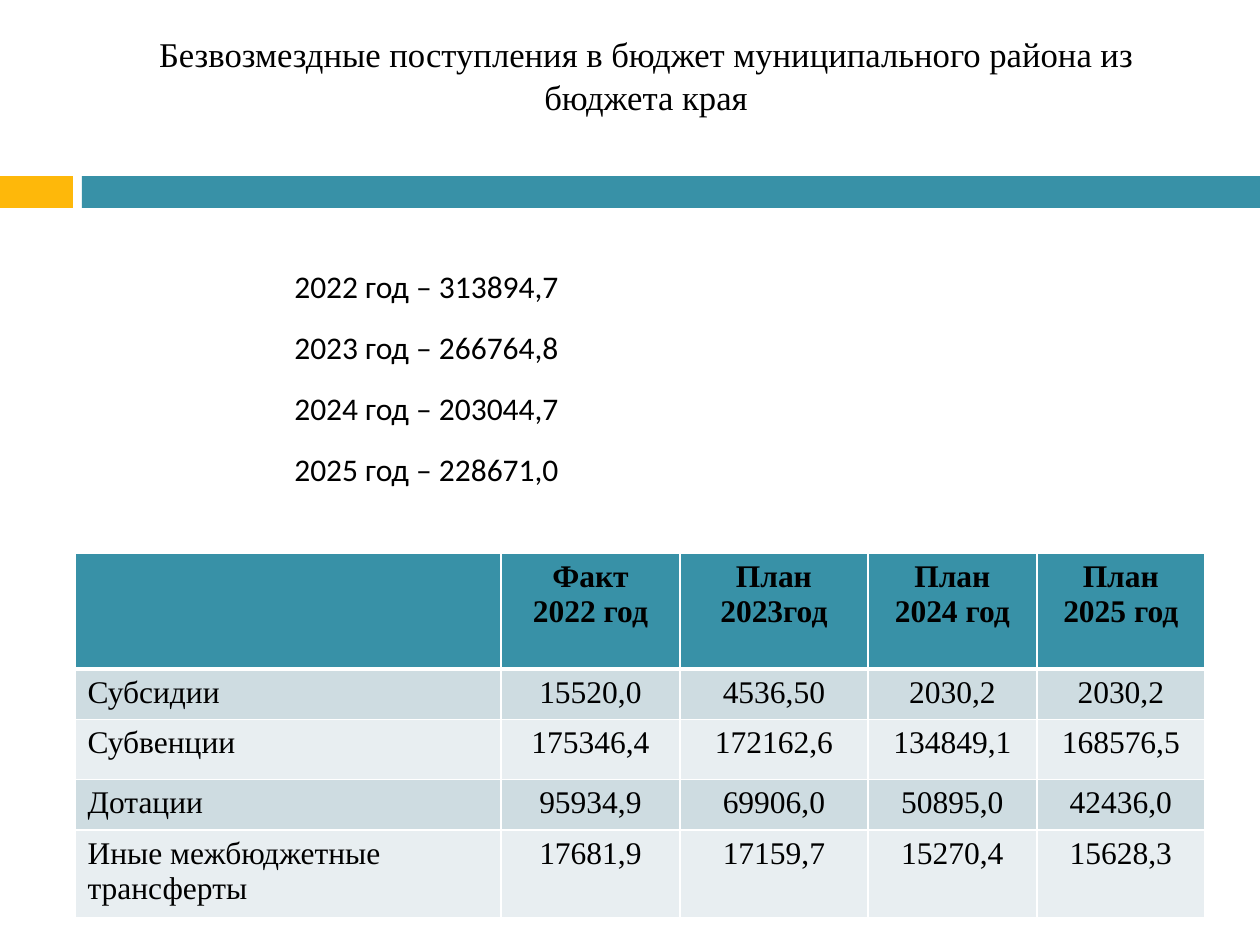
from lxml import etree
from pptx import Presentation, util as u
from pptx.dml.color import RGBColor
from pptx.enum import shapes, text
from pptx.oxml.ns import qn

TEAL, AMBER, WHITE, BLACK = "3891A7", "FEB80A", "FFFFFF", "000000"
BANDS = ["CEDCE1", "E8EEF1"]
SERIF, SANS = "Times New Roman", "Calibri"
LEFT, CENTER = text.PP_ALIGN.LEFT, text.PP_ALIGN.CENTER


def px(n):
    return u.Emu(round(n * 914400 / 126))


def paint(fill, color):
    fill.solid()
    fill.fore_color.rgb = RGBColor.from_string(color)


class Deck:
    def __init__(self, width, height):
        self.prs = Presentation()
        self.prs.slide_width, self.prs.slide_height = px(width), px(height)
        self.s = self.prs.slides.add_slide(self.prs.slide_layouts[6])

    def set_text(self, tf, content, font, size, align, bold=False, spacing=None, after=None):
        tf.text = content
        for p in tf.paragraphs:
            p.alignment = align
            p.line_spacing = spacing
            p.space_after = after
            for r in p.runs:
                r.font.name, r.font.size, r.font.bold = font, u.Pt(size), bold
                r.font.color.rgb = RGBColor.from_string(BLACK)

    def bar(self, x, y, w, h, color):
        sp = self.s.shapes.add_shape(shapes.MSO_SHAPE.RECTANGLE, px(x), px(y), px(w), px(h))
        sp.shadow.inherit = False
        paint(sp.fill, color)
        sp.line.fill.background()

    def textbox(self, x, y, w, h, content, anchor, **style):
        tf = self.s.shapes.add_textbox(px(x), px(y), px(w), px(h)).text_frame
        tf.word_wrap = True
        tf.vertical_anchor = anchor
        self.set_text(tf, content, **style)

    def border(self, cell, side, points):
        ln = etree.SubElement(cell._tc.get_or_add_tcPr(), qn("a:" + side), w=str(u.Pt(points)))
        fill = etree.SubElement(ln, qn("a:solidFill"))
        etree.SubElement(fill, qn("a:srgbClr"), val=WHITE)

    def table(self, x, y, widths, heights, rows):
        table = self.s.shapes.add_table(len(rows), len(widths), px(x), px(y),
                                        px(sum(widths)), px(sum(heights))).table
        for column, width in zip(table.columns, widths):
            column.width = px(width)
        for i, (row, height) in enumerate(zip(rows, heights)):
            table.rows[i].height = px(height)
            for j, content in enumerate(row):
                cell = table.cell(i, j)
                self.set_text(cell.text_frame, content, SERIF, 18,
                              CENTER if j else LEFT, bold=i == 0)
                self.border(cell, "lnL", 1)
                self.border(cell, "lnR", 1)
                self.border(cell, "lnT", 3 if i == 1 else 1)
                self.border(cell, "lnB", 3 if i == 0 else 1)
                paint(cell.fill, BANDS[(i - 1) % 2] if i else TEAL)


def main():
    deck = Deck(1260, 945)
    deck.bar(0, 176, 73, 32, AMBER)
    deck.bar(82, 176, 1178, 32, TEAL)
    deck.textbox(84, 32, 1124, 84,
                 "Безвозмездные поступления в бюджет муниципального района из бюджета края",
                 text.MSO_ANCHOR.MIDDLE, font=SERIF, size=19.8, align=CENTER, spacing=1.05)
    deck.table(75, 553, [426, 179, 188, 169, 168], [116, 50, 60, 50, 88], [
        ["", "Факт\n2022 год", "План\n2023год", "План\n2024 год", "План\n2025 год"],
        ["Субсидии", "15520,0", "4536,50", "2030,2", "2030,2"],
        ["Субвенции", "175346,4", "172162,6", "134849,1", "168576,5"],
        ["Дотации", "95934,9", "69906,0", "50895,0", "42436,0"],
        ["Иные межбюджетные трансферты", "17681,9", "17159,7", "15270,4", "15628,3"],
    ])
    totals = {2022: "313894,7", 2023: "266764,8", 2024: "203044,7", 2025: "228671,0"}
    deck.textbox(282, 255, 630, 302,
                 "\n".join(f"{year} год – {total}" for year, total in totals.items()),
                 text.MSO_ANCHOR.TOP, font=SANS, size=18, align=LEFT,
                 spacing=1.15, after=u.Pt(10))
    deck.prs.save("out.pptx")


if __name__ == "__main__":
    main()
